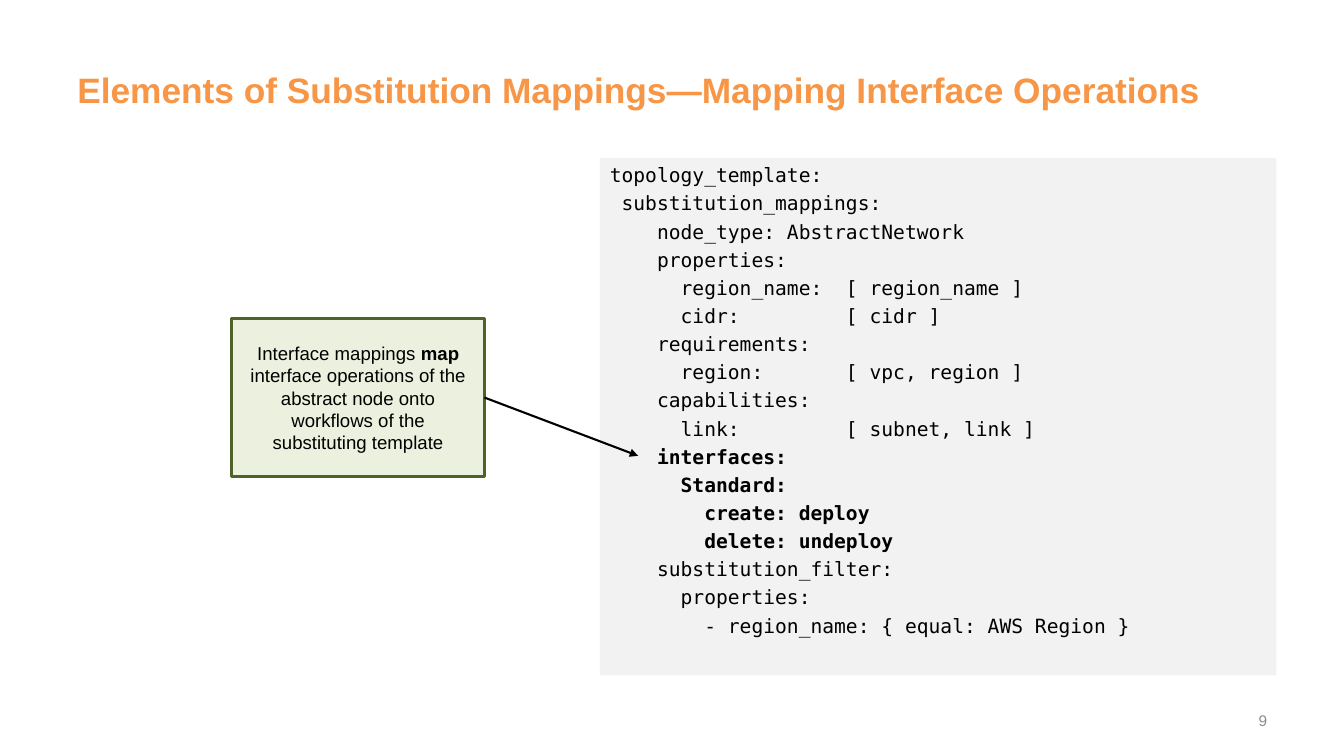
from dataclasses import dataclass

from lxml import etree
from pptx import Presentation
from pptx.dml.color import RGBColor
from pptx.enum import shapes, text
from pptx.oxml import ns
from pptx.util import Pt

ORANGE = RGBColor(0xF7, 0x96, 0x46)
BLACK = RGBColor(0, 0, 0)
GRAY = RGBColor(0x8C, 0x8C, 0x8C)
PANEL = RGBColor(0xF2, 0xF2, 0xF2)
PALE_GREEN = RGBColor(0xEB, 0xF1, 0xDE)
DARK_GREEN = RGBColor(0x4F, 0x62, 0x28)

LEFT, CENTER, RIGHT = text.PP_ALIGN.LEFT, text.PP_ALIGN.CENTER, text.PP_ALIGN.RIGHT
TOP, MIDDLE = text.MSO_ANCHOR.TOP, text.MSO_ANCHOR.MIDDLE

CODE = """topology_template:
 substitution_mappings:
    node_type: AbstractNetwork
    properties:
      region_name:  [ region_name ]
      cidr:         [ cidr ]
    requirements:
      region:       [ vpc, region ]
    capabilities:
      link:         [ subnet, link ]
    interfaces:
      Standard:
        create: deploy
        delete: undeploy
    substitution_filter:
      properties:
        - region_name: { equal: AWS Region }""".split("\n")
BOLD_LINES = range(10, 14)


@dataclass
class Span:
    text: str
    bold: bool = False


@dataclass
class Style:
    name: str
    size: float
    color: RGBColor
    align: text.PP_ALIGN = LEFT
    anchor: text.MSO_ANCHOR = MIDDLE
    gap: float = 0


@dataclass
class Box:
    left: float
    top: float
    width: float
    height: float

    def lengths(self) -> list[Pt]:
        return [Pt(v) for v in (self.left, self.top, self.width, self.height)]


def set_all(target, values: dict) -> None:
    for key, value in values.items():
        setattr(target, key, value)


def place(sp, box: Box) -> None:
    set_all(sp, dict(zip(("left", "top", "width", "height"), box.lengths())))


def write(sp, lines: list[list[Span]], style: Style) -> None:
    tf = sp.text_frame
    set_all(tf, {"word_wrap": True, "auto_size": text.MSO_AUTO_SIZE.NONE,
                 "vertical_anchor": style.anchor})
    for i, line in enumerate(lines):
        p = tf.add_paragraph() if i else tf.paragraphs[0]
        set_all(p, {"alignment": style.align,
                    "space_before": Pt(style.gap if i else 0)})
        for span in line:
            r = p.add_run()
            r.text = span.text
            set_all(r.font, {"name": style.name, "size": Pt(style.size), "bold": span.bold})
            r.font.color.rgb = style.color


def remove_bullets(sp) -> None:
    for p in sp.text_frame.paragraphs:
        pPr = p._p.get_or_add_pPr()
        pPr.set("marL", "0")
        pPr.set("indent", "0")
        etree.SubElement(pPr, ns.qn("a:buNone"))


def paint(sp, fill: RGBColor) -> None:
    sp.fill.solid()
    sp.fill.fore_color.rgb = fill


def add_arrow(s, start, x: float, y: float) -> None:
    sp = s.shapes.add_connector(shapes.MSO_CONNECTOR.STRAIGHT, 0, 0, Pt(x), Pt(y))
    sp.begin_connect(start, 3)
    sp.line.color.rgb = BLACK
    sp.line.width = Pt(1.5)
    etree.SubElement(sp.line._get_or_add_ln(), ns.qn("a:tailEnd"), type="triangle")
    etree.SubElement(sp._element.spPr, ns.qn("a:effectLst"))


def main() -> None:
    prs = Presentation()
    set_all(prs, {"slide_width": Pt(960), "slide_height": Pt(540)})
    s = prs.slides.add_slide(prs.slide_layouts[1])

    title = s.shapes.title
    place(title, Box(48, 32.4, 864, 62.6))
    write(title, [[Span("Elements of Substitution Mappings—Mapping Interface Operations", True)]],
          Style("Arial", 25.2, ORANGE))

    code = s.placeholders[1]
    place(code, Box(428.4, 113, 483.4, 369.2))
    paint(code, PANEL)
    write(code, [[Span(line, i in BOLD_LINES)] for i, line in enumerate(CODE)],
          Style("DejaVu Sans Mono", 14, BLACK, anchor=TOP, gap=3.3))
    remove_bullets(code)

    number = s.shapes.add_textbox(*Box(688.3, 500.4, 224, 28.8).lengths())
    write(number, [[Span("9")]], Style("Arial", 11, GRAY, RIGHT))

    callout = s.shapes.add_shape(shapes.MSO_SHAPE.RECTANGLE,
                                 *Box(165.6, 227.5, 180.5, 113).lengths())
    callout.shadow.inherit = False
    paint(callout, PALE_GREEN)
    callout.line.color.rgb = DARK_GREEN
    callout.line.width = Pt(2)
    write(callout, [[Span("Interface mappings "), Span("map", True),
                     Span(" interface operations of the abstract node onto workflows "
                          "of the substituting template")]],
          Style("Arial", 13.3, BLACK, CENTER))
    add_arrow(s, callout, 455.8, 325.6)

    prs.save("out.pptx")


if __name__ == "__main__":
    main()
